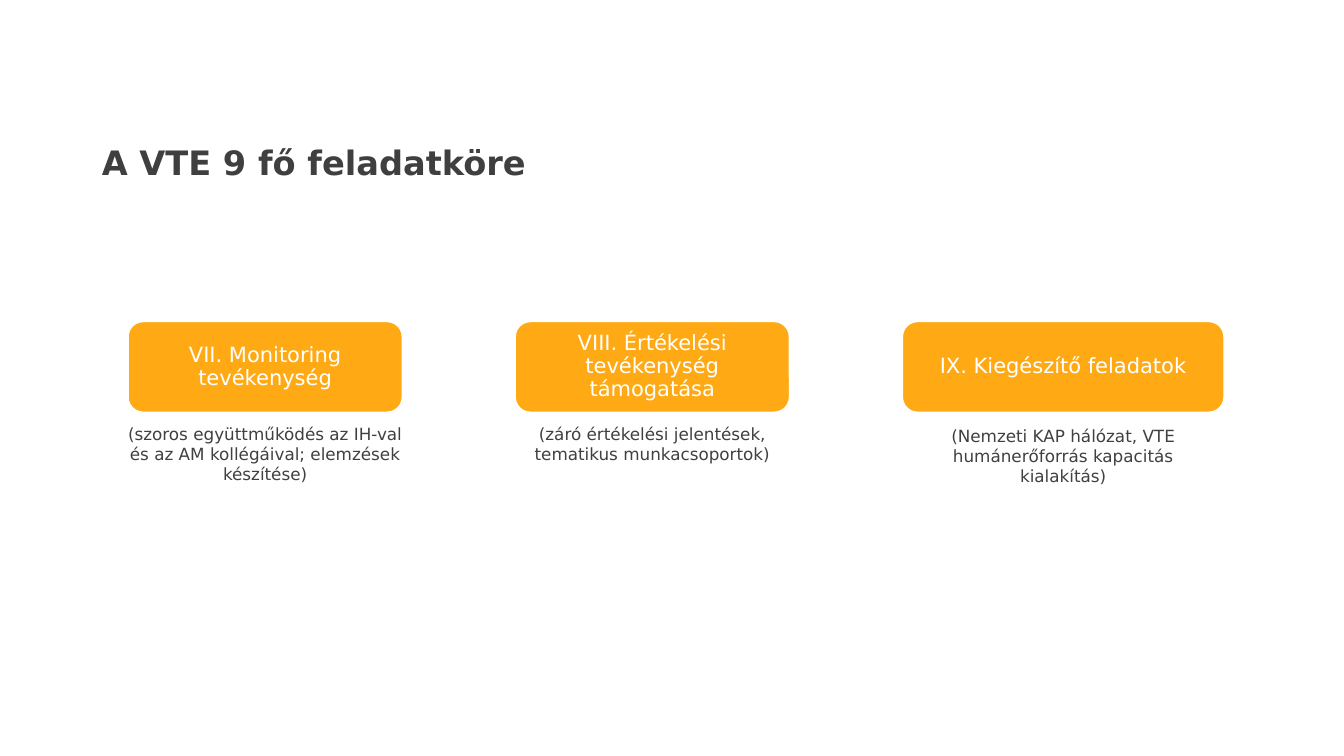
from pptx import Presentation
from pptx.dml.color import RGBColor
from pptx.enum.shapes import MSO_SHAPE
from pptx.enum.text import MSO_ANCHOR, PP_ALIGN
from pptx.util import Inches, Pt

TITLE = "A VTE 9 fő feladatköre"
# heading, card width, note, note width, note top
TASKS = [
    ("VII. Monitoring tevékenység", 2.72,
     "(szoros együttműködés az IH-val és az AM kollégáival; elemzések készítése)", 2.92, 4.15),
    ("VIII. Értékelési tevékenység támogatása", 2.72,
     "(záró értékelési jelentések, tematikus munkacsoportok)", 3.19, 4.15),
    ("IX. Kiegészítő feladatok", 3.19,
     "(Nemzeti KAP hálózat, VTE humánerőforrás kapacitás kialakítás)", 2.92, 4.17),
]

FONT = "DejaVu Sans"
ORANGE = RGBColor(0xFF, 0xAA, 0x15)
WHITE = RGBColor(0xFF, 0xFF, 0xFF)
TITLE_GREY = RGBColor(0x3F, 0x3F, 0x3F)
NOTE_GREY = RGBColor(0x40, 0x40, 0x40)

FIRST_LEFT, COLUMN_STEP = 1.27, 3.84
CARD_TOP, CARD_HEIGHT = 3.19, 0.9
NOTE_HEIGHT = 0.71


def write_text(shape, text, *, size, color, bold=False, align=PP_ALIGN.CENTER,
               anchor=MSO_ANCHOR.MIDDLE, line_spacing=1.0, inset_x=0.1, inset_y=0.05):
    frame = shape.text_frame
    frame.word_wrap = True
    frame.vertical_anchor = anchor
    frame.margin_left = frame.margin_right = Inches(inset_x)
    frame.margin_top = frame.margin_bottom = Inches(inset_y)
    paragraph = frame.paragraphs[0]
    paragraph.alignment = align
    paragraph.line_spacing = line_spacing
    run = paragraph.add_run()
    run.text = text
    run.font.name = FONT
    run.font.size = Pt(size)
    run.font.bold = bold
    run.font.color.rgb = color


def add_text_box(slide, left, top, width, height, text, **text_format):
    box = slide.shapes.add_textbox(Inches(left), Inches(top), Inches(width), Inches(height))
    write_text(box, text, **text_format)


def add_card(slide, left, width, heading):
    card = slide.shapes.add_shape(MSO_SHAPE.ROUNDED_RECTANGLE, Inches(left), Inches(CARD_TOP),
                                  Inches(width), Inches(CARD_HEIGHT))
    card.shadow.inherit = False
    card.fill.solid()
    card.fill.fore_color.rgb = ORANGE
    card.line.color.rgb = WHITE
    card.line.width = Pt(1)
    write_text(card, heading, size=15, color=WHITE, line_spacing=0.9, inset_x=0.06, inset_y=0.06)


def main():
    presentation = Presentation()
    presentation.slide_width = Inches(13.33)
    presentation.slide_height = Inches(7.5)
    slide = presentation.slides.add_slide(presentation.slide_layouts[6])

    add_text_box(slide, 0.96, 1.44, 8.57, 0.39, TITLE, size=24, color=TITLE_GREY, bold=True,
                 align=PP_ALIGN.LEFT, line_spacing=0.9, inset_x=0.05)
    for column, (heading, card_width, note, note_width, note_top) in enumerate(TASKS):
        left = FIRST_LEFT + column * COLUMN_STEP
        add_card(slide, left, card_width, heading)
        note_left = left + (card_width - note_width) / 2
        add_text_box(slide, note_left, note_top, note_width, NOTE_HEIGHT, note,
                     size=12, color=NOTE_GREY, anchor=MSO_ANCHOR.TOP)

    presentation.save("out.pptx")


if __name__ == "__main__":
    main()
